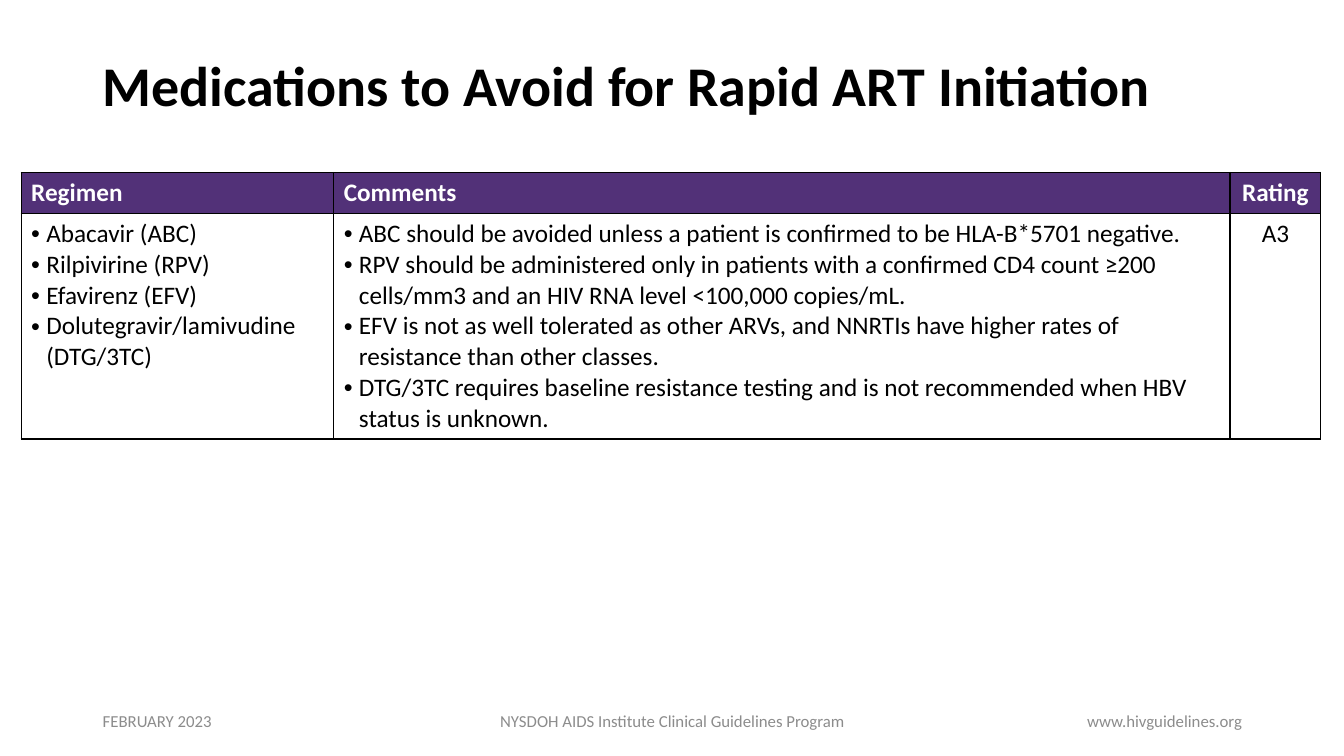
import pptx
import pptx.util
import pptx.dml.color
import pptx.enum.text
import pptx.oxml
from pptx.oxml.ns import nsdecls

Inches, Pt = pptx.util.Inches, pptx.util.Pt
ALIGN = pptx.enum.text.PP_ALIGN
MIDDLE = pptx.enum.text.MSO_ANCHOR.MIDDLE
PURPLE, WHITE, BLACK, GRAY = "523178", "FFFFFF", "000000", "8C8C8C"


def color(hex_string):
    return pptx.dml.color.RGBColor.from_string(hex_string)


def write(frame, *lines, size=18, ink=BLACK, bold=False, align=ALIGN.LEFT,
          bullet=False, spacing=None):
    """Fill a text frame with one paragraph per line."""
    frame.word_wrap = True
    for i, line in enumerate(lines):
        paragraph = frame.paragraphs[0] if i == 0 else frame.add_paragraph()
        paragraph.alignment = align
        if spacing:
            paragraph.line_spacing = spacing
        if bullet:
            props = paragraph._p.get_or_add_pPr()
            props.set("marL", str(Inches(0.15)))
            props.set("indent", str(Inches(-0.15)))
            for tag in ('buFont {} typeface="Arial"', 'buChar {} char="•"'):
                props.append(pptx.oxml.parse_xml(f"<a:{tag.format(nsdecls('a'))}/>"))
        run = paragraph.add_run()
        run.text = line
        run.font.name = "Calibri"
        run.font.size = Pt(size)
        run.font.bold = bold
        run.font.color.rgb = color(ink)


deck = pptx.Presentation()
deck.slide_width, deck.slide_height = Inches(13.33), Inches(7.5)
slide = deck.slides.add_slide(deck.slide_layouts[5])
margin = 0.92

title = slide.shapes.title
title.left, title.top = Inches(margin), Inches(0.15)
title.width, title.height = Inches(10.63), Inches(1.45)
title.text_frame.vertical_anchor = MIDDLE
write(title.text_frame, "Medications to Avoid for Rapid ART Initiation",
      size=40, bold=True, spacing=0.9)

# Regimen table: heading, column width, alignment, bulleted, entries
columns = [
    ("Regimen", 3.1, ALIGN.LEFT, True, [
        "Abacavir (ABC)",
        "Rilpivirine (RPV)",
        "Efavirenz (EFV)",
        "Dolutegravir/lamivudine (DTG/3TC)",
    ]),
    ("Comments", 8.89, ALIGN.LEFT, True, [
        "ABC should be avoided unless a patient is confirmed to be HLA-B*5701 negative.",
        "RPV should be administered only in patients with a confirmed CD4 count ≥200 "
        "cells/mm3 and an HIV RNA level <100,000 copies/mL.",
        "EFV is not as well tolerated as other ARVs, and NNRTIs have higher rates of "
        "resistance than other classes.",
        "DTG/3TC requires baseline resistance testing and is not recommended when HBV "
        "status is unknown.",
    ]),
    ("Rating", 0.9, ALIGN.CENTER, False, ["A3"]),
]
heading_height, table_height = 0.41, 2.61
regimens = slide.shapes.add_table(
    2, len(columns), Inches(0.21), Inches(1.71),
    Inches(sum(column[1] for column in columns)), Inches(table_height)).table
regimens.horz_banding = False
regimens.rows[0].height = Inches(heading_height)
regimens.rows[1].height = Inches(table_height - heading_height)

for c, (heading, width, align, bulleted, entries) in enumerate(columns):
    regimens.columns[c].width = Inches(width)
    heading_cell, entry_cell = regimens.cell(0, c), regimens.cell(1, c)
    write(heading_cell.text_frame, heading, ink=WHITE, bold=True, align=align)
    write(entry_cell.text_frame, *entries, align=align, bullet=bulleted)
    for cell, fill in ((heading_cell, PURPLE), (entry_cell, WHITE)):
        cell.fill.solid()
        cell.fill.fore_color.rgb = color(fill)
        for i, side in enumerate("LRTB"):
            border = pptx.oxml.parse_xml(
                f'<a:ln{side} {nsdecls("a")} w="{Pt(1)}"><a:solidFill>'
                f'<a:srgbClr val="{BLACK}"/></a:solidFill></a:ln{side}>')
            cell._tc.get_or_add_tcPr().insert(i, border)

footers = [
    ("FEBRUARY 2023", margin, 3, ALIGN.LEFT),
    ("NYSDOH AIDS Institute Clinical Guidelines Program", 4.42, 4.5, ALIGN.CENTER),
    ("www.hivguidelines.org", 9.42, 3, ALIGN.RIGHT),
]
for words, left, width, align in footers:
    footer = slide.shapes.add_textbox(
        Inches(left), Inches(6.95), Inches(width), Inches(0.4)).text_frame
    footer.vertical_anchor = MIDDLE
    write(footer, words, size=12, ink=GRAY, align=align)

deck.save("out.pptx")
